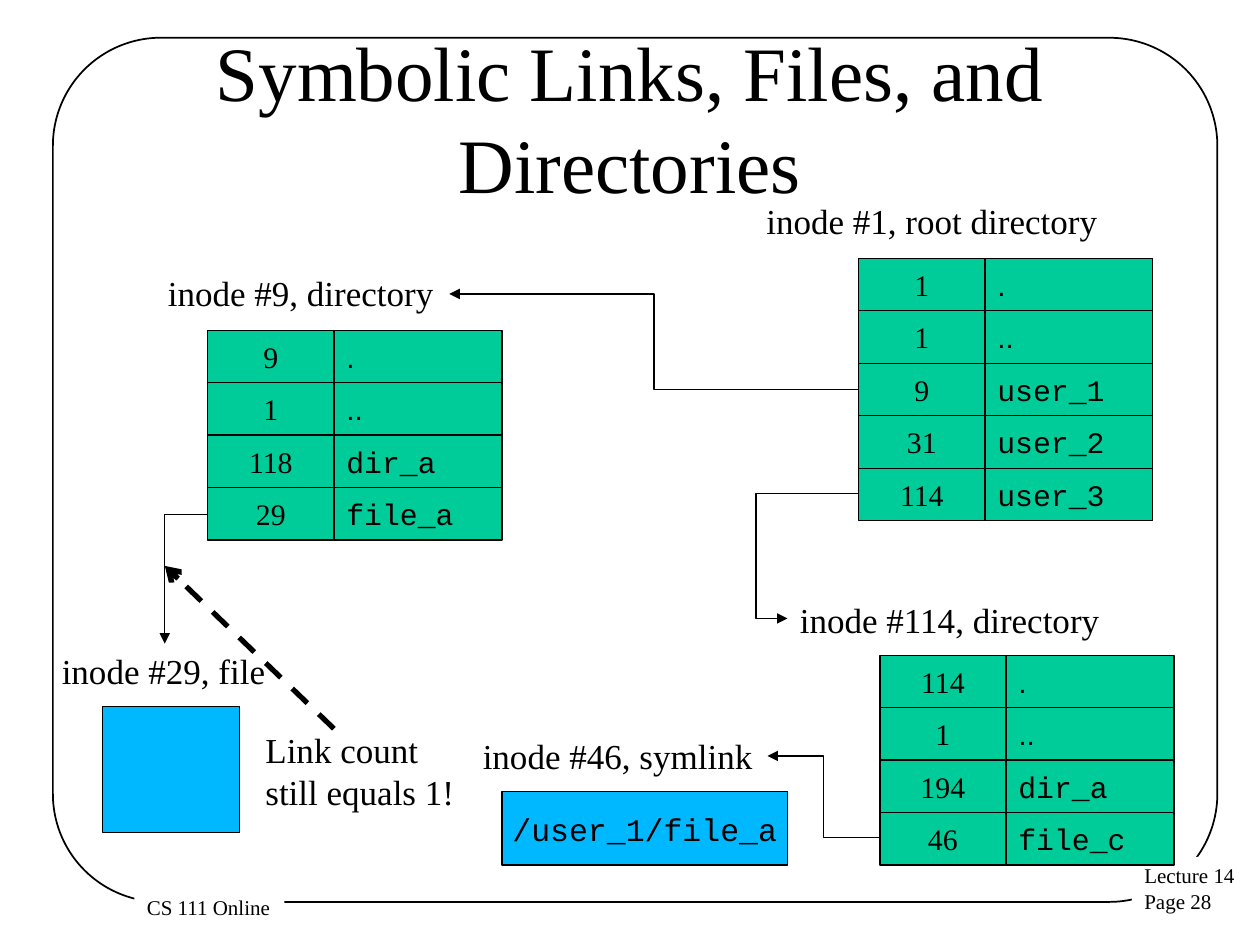
from dataclasses import dataclass
from typing import Optional

from lxml import etree
from pptx import Presentation
from pptx.dml.color import RGBColor
from pptx.enum.dml import MSO_LINE
from pptx.enum.shapes import MSO_CONNECTOR, MSO_SHAPE
from pptx.enum.text import MSO_ANCHOR, PP_ALIGN
from pptx.oxml.ns import qn
from pptx.util import Inches, Pt

BLACK = RGBColor(0x00, 0x00, 0x00)
WHITE = RGBColor(0xFF, 0xFF, 0xFF)
GREEN = RGBColor(0x00, 0xCC, 0x99)
BLUE = RGBColor(0x00, 0xB8, 0xFF)
SERIF, MONO, SANS = "Times New Roman", "Courier New", "Arial"
RECT, ROUND = MSO_SHAPE.RECTANGLE, MSO_SHAPE.ROUNDED_RECTANGLE
ELBOW, STRAIGHT = MSO_CONNECTOR.ELBOW, MSO_CONNECTOR.STRAIGHT
LEFT, CENTER = PP_ALIGN.LEFT, PP_ALIGN.CENTER
TOP, MIDDLE = MSO_ANCHOR.TOP, MSO_ANCHOR.MIDDLE
DASH = MSO_LINE.DASH

# The slide is a grid of 120 columns by 90 rows, all lengths count its cells.
COLS, ROWS = 120, 90
CELL = Inches(10) / COLS
ROW_H, NUM_W, NAME_W = 5, 12, 16


@dataclass
class Box:
    x: float
    y: float
    w: float
    h: float


@dataclass
class Folder:
    x: float
    y: float
    rows: list[tuple[str, str]]


@dataclass
class Label:
    box: Box
    lines: list[str]
    size: int = 20
    align: PP_ALIGN = LEFT
    anchor: MSO_ANCHOR = TOP
    wrap: bool = False
    fill: Optional[RGBColor] = None


@dataclass
class Arrow:
    """An arrow; bend is the place of the turn, None for a single corner."""
    start: tuple[float, float]
    end: tuple[float, float]
    kind: MSO_CONNECTOR = ELBOW
    bend: Optional[float] = 0.5
    width: float = 0.75
    head: str = "triangle"
    dash: Optional[MSO_LINE] = None


FOLDERS = [
    Folder(81.8, 24.6, [("1", "."), ("1", ".."), ("9", "user_1"),
                        ("31", "user_2"), ("114", "user_3")]),
    Folder(19.8, 31.45, [("9", "."), ("1", ".."), ("118", "dir_a"),
                         ("29", "file_a")]),
    Folder(83.8, 62.4, [("114", "."), ("1", ".."), ("194", "dir_a"),
                        ("46", "file_c")]),
]
LABELS = [
    Label(Box(107.8, 81.6, 11.2, 6.1), ["Lecture 14", "Page 28"], 12,
          fill=WHITE),
    Label(Box(12.8, 84.6, 14.3, 3.6), ["CS 111 Online"], 12, fill=WHITE),
    Label(Box(6, 3.6, 108, 15), ["Symbolic Links, Files, and Directories"],
          44, CENTER, MIDDLE, True),
    Label(Box(14.8, 25.3, 28, 5.3), ["inode #9, directory"]),
    Label(Box(71.8, 18.4, 34.2, 5.3), ["inode #1, root directory"]),
    Label(Box(75, 56.4, 31.2, 5.3), ["inode #114, directory"]),
    Label(Box(4.7, 61.3, 22, 5.3), ["inode #29, file"]),
    Label(Box(44.8, 69.4, 28.3, 5.3), ["inode #46, symlink"]),
    Label(Box(24.1, 68.8, 20.6, 9.2), ["Link count still equals 1!"],
          wrap=True),
]
ARROWS = [
    Arrow((81.8, 37.1), (42.8, 28)),
    Arrow((81.8, 47), (75, 58.9), bend=1.44),
    Arrow((19.8, 49), (15.7, 61.3), bend=None),
    Arrow((83.8, 79.8), (73.1, 72)),
    Arrow((31.8, 69.4), (15.7, 53.9), STRAIGHT, width=3, head="arrow",
          dash=DASH),
]


def emu(*cells: float) -> list[int]:
    return [round(c * CELL) for c in cells]


def write(shape, lines: list[str], font: str, size: int, align: PP_ALIGN,
          anchor: MSO_ANCHOR, wrap: bool = False) -> None:
    frame = shape.text_frame
    frame.word_wrap = wrap
    frame.vertical_anchor = anchor
    for i, line in enumerate(lines):
        para = frame.add_paragraph() if i else frame.paragraphs[0]
        para.alignment = align
        run = para.add_run()
        run.text = line
        run.font.name = font
        run.font.size = Pt(size)
        run.font.color.rgb = BLACK


def draw_box(slide, box: Box, fill: Optional[RGBColor] = None,
             kind: MSO_SHAPE = RECT, width: float = 0.75):
    shape = slide.shapes.add_shape(kind, *emu(box.x, box.y, box.w, box.h))
    shape.shadow.inherit = False
    if fill is None:
        shape.fill.background()
    else:
        shape.fill.solid()
        shape.fill.fore_color.rgb = fill
    shape.line.color.rgb = BLACK
    shape.line.width = Pt(width)
    return shape


def draw_label(slide, label: Label) -> None:
    box = label.box
    shape = slide.shapes.add_textbox(*emu(box.x, box.y, box.w, box.h))
    if label.fill is not None:
        shape.fill.solid()
        shape.fill.fore_color.rgb = label.fill
    write(shape, label.lines, SERIF, label.size, label.align, label.anchor,
          label.wrap)


def draw_folder(slide, folder: Folder) -> None:
    for i, (num, name) in enumerate(folder.rows):
        y = folder.y + i * ROW_H
        left = draw_box(slide, Box(folder.x, y, NUM_W, ROW_H), GREEN)
        write(left, [num], SERIF, 17, CENTER, MIDDLE)
        right = draw_box(slide, Box(folder.x + NUM_W, y, NAME_W, ROW_H), GREEN)
        font = MONO if name.strip(".") else SANS
        write(right, [name], font, 17, LEFT, MIDDLE)


def draw_arrow(slide, arrow: Arrow) -> None:
    line = slide.shapes.add_connector(arrow.kind,
                                      *emu(*arrow.start, *arrow.end))
    line.line.color.rgb = BLACK
    line.line.width = Pt(arrow.width)
    if arrow.dash is not None:
        line.line.dash_style = arrow.dash
    props = line._element.spPr
    etree.SubElement(props.find(qn("a:ln")), qn("a:tailEnd"), type=arrow.head)
    etree.SubElement(props, qn("a:effectLst"))
    if arrow.kind == ELBOW:
        geom = props.find(qn("a:prstGeom"))
        if arrow.bend is None:
            geom.set("prst", "bentConnector2")
        else:
            etree.SubElement(geom.find(qn("a:avLst")), qn("a:gd"), name="adj1",
                             fmla=f"val {round(arrow.bend * 100000)}")


def main() -> None:
    deck = Presentation()
    deck.slide_width, deck.slide_height = emu(COLS, ROWS)
    slide = deck.slides.add_slide(deck.slide_layouts[6])
    border = draw_box(slide, Box(5.04, 3.6, 110.9, 82.3), None, ROUND, 1)
    border.adjustments[0] = 0.125
    for label in LABELS:
        draw_label(slide, label)
    for folder in FOLDERS:
        draw_folder(slide, folder)
    draw_box(slide, Box(9.8, 67.3, 13, 12), BLUE)
    link = draw_box(slide, Box(47.8, 75.4, 27.2, 7), BLUE)
    write(link, ["/user_1/file_a"], MONO, 18, CENTER, MIDDLE)
    for arrow in ARROWS:
        draw_arrow(slide, arrow)
    deck.save("out.pptx")


if __name__ == "__main__":
    main()
